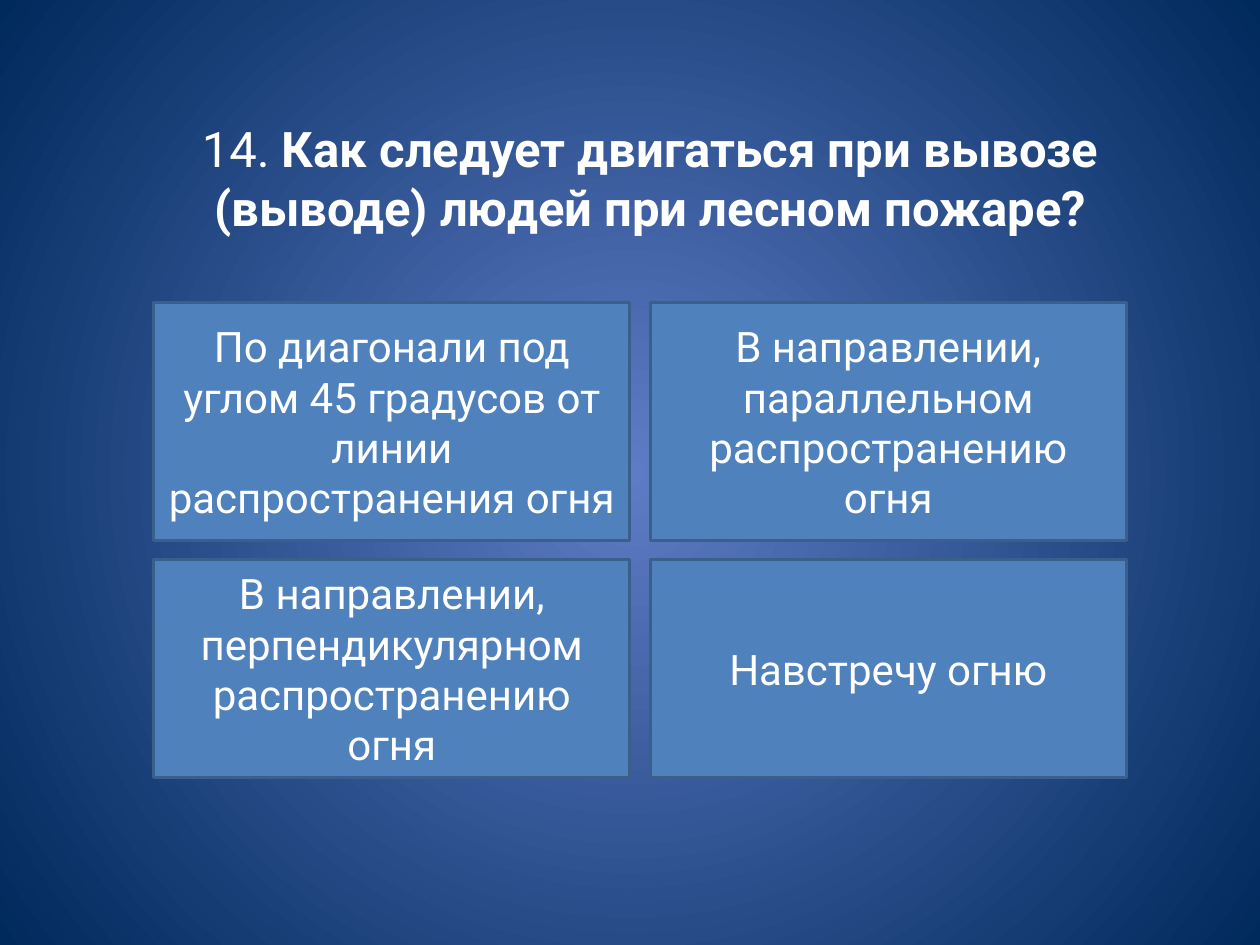
from lxml import etree
from pptx import Presentation
from pptx.dml.color import RGBColor
from pptx.enum.shapes import MSO_SHAPE
from pptx.enum.text import MSO_ANCHOR, PP_ALIGN
from pptx.oxml.ns import qn
from pptx.util import Inches, Pt

WHITE = RGBColor(0xFF, 0xFF, 0xFF)
BLUE = RGBColor(0x4F, 0x81, 0xBD)
EDGE = RGBColor(0x3A, 0x5F, 0x8C)
GLOW = RGBColor(0x5E, 0x7C, 0xC5)
NAVY = RGBColor(0x00, 0x29, 0x5C)


def add_text(sp, runs, size):
    tf = sp.text_frame
    tf.word_wrap = True
    tf.vertical_anchor = MSO_ANCHOR.MIDDLE
    p = tf.paragraphs[0]
    p.alignment = PP_ALIGN.CENTER
    for text, bold in runs:
        r = p.add_run()
        r.text = text
        r.font.name = "Roboto"
        r.font.size = Pt(size)
        r.font.bold = bold
        r.font.color.rgb = WHITE


prs = Presentation()
prs.slide_width = Inches(10)
prs.slide_height = Inches(7.5)
s = prs.slides.add_slide(prs.slide_layouts[6])

fill = s.background.fill
fill.gradient()
for stop, color, position in zip(fill.gradient_stops, (GLOW, NAVY), (0, 1)):
    stop.color.rgb = color
    stop.position = position
grad = s.element.find(".//" + qn("a:gradFill"))
grad.remove(grad.find(qn("a:lin")))
circle = etree.Element(qn("a:path"), path="circle")
etree.SubElement(circle, qn("a:fillToRect"), l="50000", t="50000", r="50000", b="50000")
grad.find(qn("a:gsLst")).addnext(circle)

title = s.shapes.add_textbox(Inches(0.91), Inches(0.6), Inches(8.5), Inches(1.61))
question = "Как следует двигаться при вывозе (выводе) людей при лесном пожаре?"
add_text(title, [("14. ", False), (question, True)], 28)

columns = (1.22, 5.16)
rows = ((2.4, 1.89), (4.44, 1.73))
answers = (
    ("По диагонали под углом 45 градусов от линии распространения огня",
     "В направлении, параллельном распространению огня"),
    ("В направлении, перпендикулярном распространению огня",
     "Навстречу огню"),
)
for (top, height), row_answers in zip(rows, answers):
    for left, answer in zip(columns, row_answers):
        sp = s.shapes.add_shape(MSO_SHAPE.RECTANGLE, Inches(left), Inches(top),
                                Inches(3.78), Inches(height))
        sp.shadow.inherit = False
        sp.fill.solid()
        sp.fill.fore_color.rgb = BLUE
        sp.line.color.rgb = EDGE
        sp.line.width = Pt(1.75)
        add_text(sp, [(answer, False)], 24)

prs.save("out.pptx")
